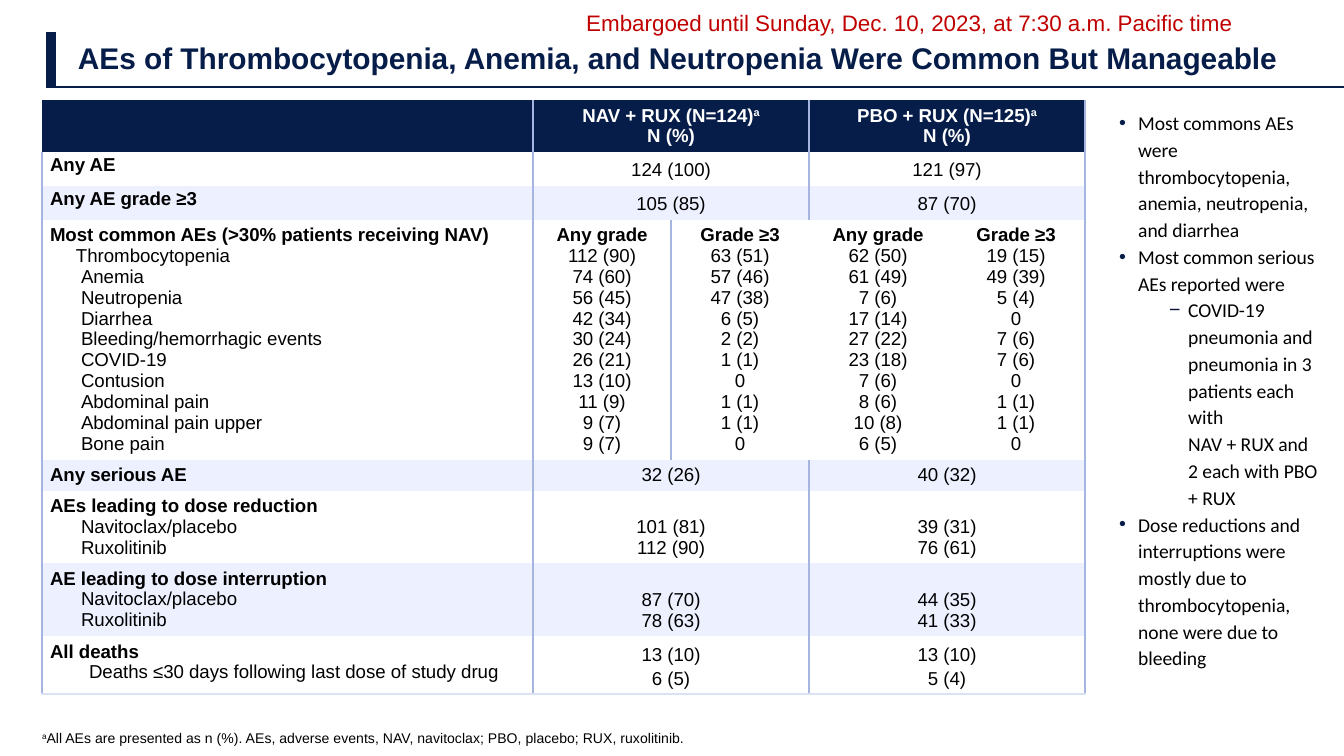
from lxml import etree
from pptx import Presentation
from pptx.dml.color import RGBColor
from pptx.enum.text import MSO_ANCHOR, PP_ALIGN
from pptx.oxml.ns import qn
from pptx.util import Emu, Pt

TOP, MIDDLE, BOTTOM = MSO_ANCHOR.TOP, MSO_ANCHOR.MIDDLE, MSO_ANCHOR.BOTTOM
LEFT, CENTER = PP_ALIGN.LEFT, PP_ALIGN.CENTER
NAVY = RGBColor(0x07, 0x1D, 0x49)
BULLET_NAVY = RGBColor(0x08, 0x15, 0x38)
WHITE = RGBColor(0xFF, 0xFF, 0xFF)
BLACK = RGBColor(0, 0, 0)
RED = RGBColor(0xC0, 0, 0)
PALE = RGBColor(0xED, 0xF0, 0xFF)
RULE = RGBColor(0xA6, 0xB5, 0xE0)
BASE_RULE = RGBColor(0xDA, 0xE3, 0xF3)
NO_STYLE = "{2D5ABB26-0587-4C30-8999-92F81FD0307C}"
PX = 914400 / 134.4


def format_runs(para, size, color, bold=False, font="Arial"):
    for span in para.runs:
        span.font.name = font
        span.font.size = Pt(size)
        span.font.bold = bold
        span.font.color.rgb = color


def add_border(cell, side, color, points=1):
    line = etree.SubElement(cell._tc.get_or_add_tcPr(), qn(f"a:ln{side}"), w=str(Pt(points)))
    fill = etree.SubElement(line, qn("a:solidFill"))
    etree.SubElement(fill, qn("a:srgbClr"), val=str(color))


deck = Presentation()
deck.slide_width, deck.slide_height = Emu(int(1344 * PX)), Emu(int(756 * PX))
page = deck.slides.add_slide(deck.slide_layouts[6])

tables = []
for rows, columns, bounds in ((1, 1, (51, 32, 1364, 55)), (8, 5, (42, 100, 1043, 593))):
    frame = page.shapes.add_table(rows, columns, *[Emu(int(n * PX)) for n in bounds])
    table = frame.table
    table.first_row = table.horz_banding = False
    table._tbl.tblPr.find(qn("a:tableStyleId")).text = NO_STYLE
    tables.append(table)
title_table, events_table = tables

title = title_table.cell(0, 0)
title.text_frame.text = "AEs of Thrombocytopenia, Anemia, and Neutropenia Were Common But Manageable"
title.vertical_anchor = MIDDLE
title.margin_left, title.margin_right = Emu(int(27 * PX)), Emu(int(10 * PX))
title.margin_top = title.margin_bottom = Emu(int(5 * PX))
format_runs(title.text_frame.paragraphs[0], 16, NAVY, True)
add_border(title, "L", NAVY, 6)
add_border(title, "B", NAVY)

any_grade, severe = "Any grade", "Grade ≥3"
event_rows = [
    (52, [""], [["NAV + RUX (N=124)", "N (%)"], ["PBO + RUX (N=125)", "N (%)"]]),
    (34, ["Any AE"], [["124 (100)"], ["121 (97)"]]),
    (34, ["Any AE grade ≥3"], [["105 (85)"], ["87 (70)"]]),
    (240, ["Most common AEs (>30% patients receiving NAV)", "Thrombocytopenia", "Anemia",
           "Neutropenia", "Diarrhea", "Bleeding/hemorrhagic events", "COVID-19", "Contusion",
           "Abdominal pain", "Abdominal pain upper", "Bone pain"],
     [[any_grade, "112 (90)", "74 (60)", "56 (45)", "42 (34)", "30 (24)", "26 (21)",
       "13 (10)", "11 (9)", "9 (7)", "9 (7)"],
      [severe, "63 (51)", "57 (46)", "47 (38)", "6 (5)", "2 (2)", "1 (1)",
       "0", "1 (1)", "1 (1)", "0"],
      [any_grade, "62 (50)", "61 (49)", "7 (6)", "17 (14)", "27 (22)", "23 (18)",
       "7 (6)", "8 (6)", "10 (8)", "6 (5)"],
      [severe, "19 (15)", "49 (39)", "5 (4)", "0", "7 (6)", "7 (6)",
       "0", "1 (1)", "1 (1)", "0"]]),
    (31, ["Any serious AE"], [["32 (26)"], ["40 (32)"]]),
    (72, ["AEs leading to dose reduction", "Navitoclax/placebo", "Ruxolitinib"],
     [["101 (81)", "112 (90)"], ["39 (31)", "76 (61)"]]),
    (73, ["AE leading to dose interruption", "Navitoclax/placebo", "Ruxolitinib"],
     [["87 (70)", "78 (63)"], ["44 (35)", "41 (33)"]]),
    (57, ["All deaths", "Deaths ≤30 days following last dose of study drug"],
     [["13 (10)", "6 (5)"], ["13 (10)", "5 (4)"]]),
]
row_fills = [NAVY, WHITE, PALE, WHITE, PALE, WHITE, PALE, WHITE]
special_indents = {"Thrombocytopenia": 26, event_rows[-1][1][1]: 39}
loose_rows, tight_labels = (1, 2, 7), (1, 2)

for index, width in enumerate([491, 138, 138, 138, 138]):
    events_table.columns[index].width = Emu(int(width * PX))

for row, (height, labels, values) in enumerate(event_rows):
    events_table.rows[row].height = Emu(int(height * PX))
    step = 4 // len(values)
    if step == 2:
        for column in (1, 3):
            events_table.cell(row, column).merge(events_table.cell(row, column + 1))
    contents = {0: labels}
    contents.update({1 + step * i: lines for i, lines in enumerate(values)})

    for column in range(5):
        cell = events_table.cell(row, column)
        if column == 1 or (column == 0 and row):
            add_border(cell, "L", RULE)
        if column in (0, 4) or (column == 3 and step == 2):
            add_border(cell, "R", RULE)
        if row == 7:
            add_border(cell, "B", BASE_RULE)
        cell.fill.solid()
        cell.fill.fore_color.rgb = row_fills[row]
        if column not in contents:
            continue

        is_label = column == 0
        vertical = 0 if is_label and row in tight_labels else 5
        cell.margin_left = Emu(int((8 if is_label else 10) * PX))
        cell.margin_right = Emu(int((4 if vertical == 0 else 10) * PX))
        cell.margin_top = cell.margin_bottom = Emu(int(vertical * PX))
        cell.vertical_anchor = BOTTOM if row in (0, 5, 6) and not is_label else TOP
        cell.text_frame.text = "\n".join(contents[column])
        for order, para in enumerate(cell.text_frame.paragraphs):
            para.alignment = LEFT if is_label else CENTER
            if row in loose_rows and (not is_label or row in tight_labels):
                para.line_spacing = 1.15
            if is_label and order:
                indent = special_indents.get(para.text, 31)
                para._p.get_or_add_pPr().set("marL", str(int(indent * PX)))
            if row == 0 and not is_label and order == 0:
                mark = para.add_run()
                mark.text = "a"
                mark._r.get_or_add_rPr().set("baseline", "30000")
            bold = row == 0 or (is_label and order == 0) or para.text in (any_grade, severe)
            format_runs(para, 10, BLACK if row else WHITE, bold)

takeaways = [
    (1, "Most commons AEs were thrombocytopenia, anemia, neutropenia, and diarrhea"),
    (1, "Most common serious AEs reported were"),
    (2, "COVID-19 pneumonia and pneumonia in 3 patients each with\vNAV + RUX and 2 each with PBO + RUX"),
    (1, "Dose reductions and interruptions were mostly due to thrombocytopenia, none were due to bleeding"),
]
bullets = {1: ("•", NAVY, 51), 2: ("−", BULLET_NAVY, 101)}
box = page.shapes.add_textbox(*[Emu(int(n * PX)) for n in (1074, 101, 259, 500)])
box.text_frame.word_wrap = True
box.text_frame.text = "\n".join(text for level, text in takeaways)
for (level, text), para in zip(takeaways, box.text_frame.paragraphs):
    symbol, color, indent = bullets[level]
    para.level = level - 1
    para.line_spacing = 1.14
    format_runs(para, 10.5, BLACK, font="Calibri")
    for line_break in para._p.findall(qn("a:br")):
        etree.SubElement(line_break, qn("a:rPr"), sz="1050")
    properties = para._p.get_or_add_pPr()
    properties.set("marL", str(int(indent * PX)))
    properties.set("indent", str(int(-19 * PX)))
    bullet_color = etree.SubElement(properties, qn("a:buClr"))
    etree.SubElement(bullet_color, qn("a:srgbClr"), val=str(color))
    etree.SubElement(properties, qn("a:buFont"), typeface="Arial")
    etree.SubElement(properties, qn("a:buChar"), char=symbol)

footnote = page.shapes.add_textbox(*[Emu(int(n * PX)) for n in (42, 730, 829, 17)])
frame = footnote.text_frame
frame.word_wrap = True
frame.margin_left = frame.margin_right = frame.margin_top = frame.margin_bottom = 0
para = frame.paragraphs[0]
for text in ("a", "All AEs are presented as n (%). AEs, adverse events, NAV, navitoclax; PBO, placebo; RUX, ruxolitinib."):
    para.add_run().text = text
format_runs(para, 7.5, BLACK)
para.runs[0]._r.get_or_add_rPr().set("baseline", "30000")

embargo = page.shapes.add_textbox(*[Emu(int(n * PX)) for n in (573, 3, 784, 40)])
embargo.text_frame.word_wrap = True
embargo.text_frame.text = "Embargoed until Sunday, Dec. 10, 2023, at 7:30 a.m. Pacific time"
format_runs(embargo.text_frame.paragraphs[0], 12, RED)

deck.save("out.pptx")
